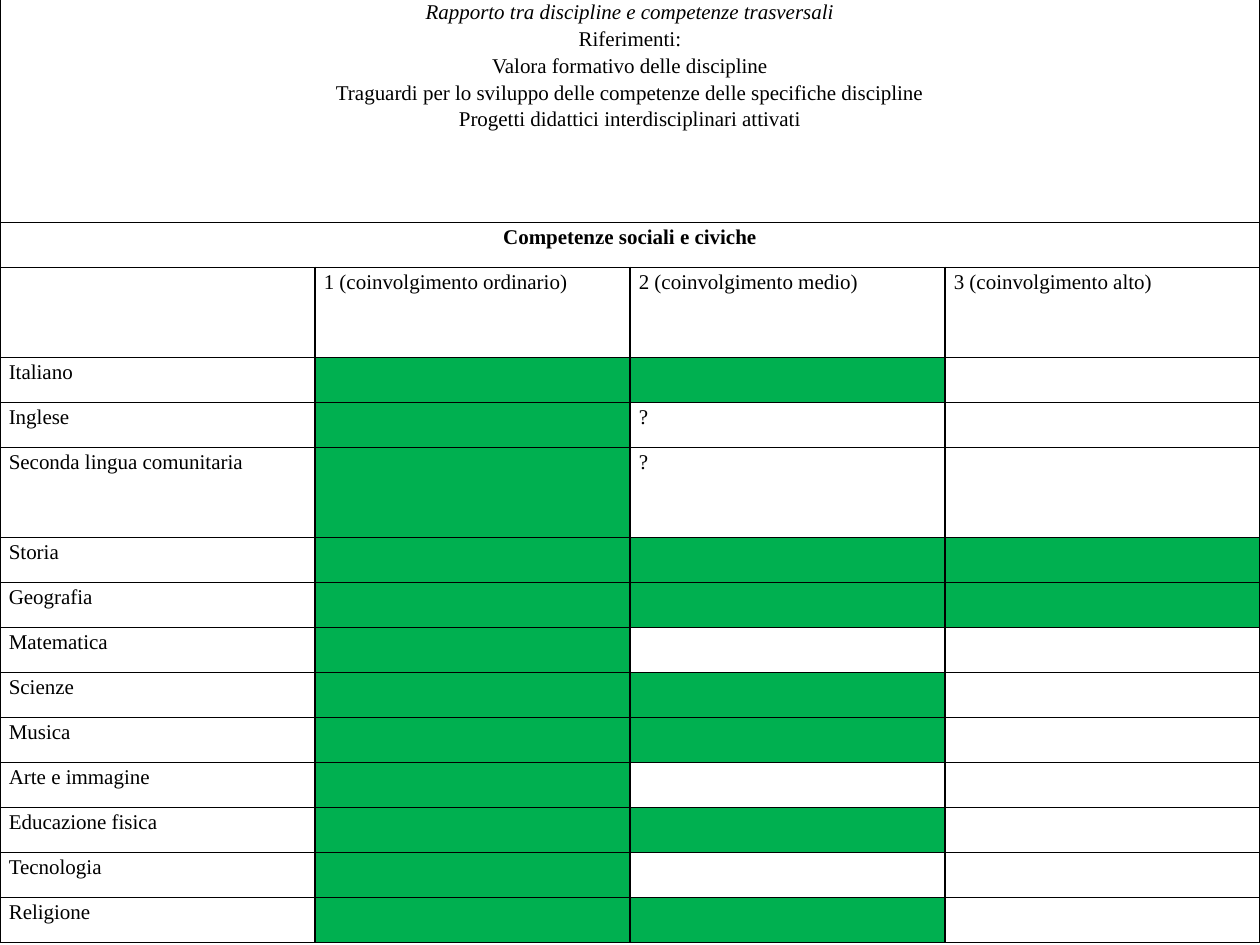
from dataclasses import dataclass

from lxml.etree import SubElement
from pptx import Presentation
from pptx.dml.color import RGBColor
from pptx.enum.text import PP_ALIGN
from pptx.oxml.ns import qn
from pptx.table import Table, _Cell
from pptx.util import Inches, Pt

BLACK = RGBColor(0, 0, 0)
GREEN = RGBColor(0x00, 0xB0, 0x50)
FONT = "Times New Roman"
COLS = 4
INTRO = (
    "Rapporto tra discipline e competenze trasversali",
    "Riferimenti:",
    "Valora formativo delle discipline",
    "Traguardi per lo sviluppo delle competenze delle specifiche discipline",
    "Progetti didattici interdisciplinari attivati",
)
HEADS = (
    "",
    "1 (coinvolgimento ordinario)",
    "2 (coinvolgimento medio)",
    "3 (coinvolgimento alto)",
)


@dataclass(frozen=True)
class Subject:
    name: str
    level: int
    note: str = ""
    units: int = 1


SUBJECTS = (
    Subject("Italiano", 2),
    Subject("Inglese", 1, "?"),
    Subject("Seconda lingua comunitaria", 1, "?", 2),
    Subject("Storia", 3),
    Subject("Geografia", 3),
    Subject("Matematica", 1),
    Subject("Scienze", 2),
    Subject("Musica", 2),
    Subject("Arte e immagine", 1),
    Subject("Educazione fisica", 2),
    Subject("Tecnologia", 1),
    Subject("Religione", 2),
)


def frame(cell: _Cell) -> None:
    props = cell._tc.get_or_add_tcPr()
    for side in ("lnL", "lnR", "lnT", "lnB"):
        line = SubElement(props, qn(f"a:{side}"), w=str(Pt(1)))
        fill = SubElement(line, qn("a:solidFill"))
        SubElement(fill, qn("a:srgbClr"), val=str(BLACK))


def write(cell: _Cell, text: str, align: PP_ALIGN = PP_ALIGN.LEFT,
          bold: bool = False) -> None:
    cell.text = text
    for para in cell.text_frame.paragraphs:
        para.alignment = align
        para.line_spacing = 1.15
        font = para.font
        font.name, font.size, font.bold = FONT, Pt(12), bold
        font.color.rgb = BLACK


def style(cell: _Cell) -> None:
    cell.margin_left = cell.margin_right = Inches(0.07)
    cell.margin_top = cell.margin_bottom = 0
    frame(cell)
    cell.fill.background()


def banner(table: Table, row: int, text: str, bold: bool = False) -> _Cell:
    cell = table.cell(row, 0)
    cell.merge(table.cell(row, COLS - 1))
    write(cell, text, PP_ALIGN.CENTER, bold)
    return cell


def grade(table: Table, row: int, item: Subject) -> None:
    write(table.cell(row, 0), item.name)
    for col in range(1, COLS):
        cell = table.cell(row, col)
        write(cell, item.note if col == 2 else "")
        if col <= item.level:
            cell.fill.solid()
            cell.fill.fore_color.rgb = GREEN


def main() -> None:
    deck = Presentation()
    deck.slide_width, deck.slide_height = Inches(10), Inches(7.5)
    slide = deck.slides.add_slide(deck.slide_layouts[6])
    units = [5, 1, 2] + [item.units for item in SUBJECTS]
    table = slide.shapes.add_table(
        len(units), COLS, 0, Inches(-0.02), deck.slide_width, deck.slide_height
    ).table
    table.first_row = table.horz_banding = False
    for row, unit in zip(table.rows, units):
        row.height = deck.slide_height * unit // sum(units)
    for cell in table.iter_cells():
        style(cell)

    intro = banner(table, 0, "\n".join(INTRO))
    intro.text_frame.paragraphs[0].font.italic = True
    banner(table, 1, "Competenze sociali e civiche", True)
    for col, head in enumerate(HEADS):
        write(table.cell(2, col), head)
    for row, item in enumerate(SUBJECTS, 3):
        grade(table, row, item)
    deck.save("out.pptx")


if __name__ == "__main__":
    main()
